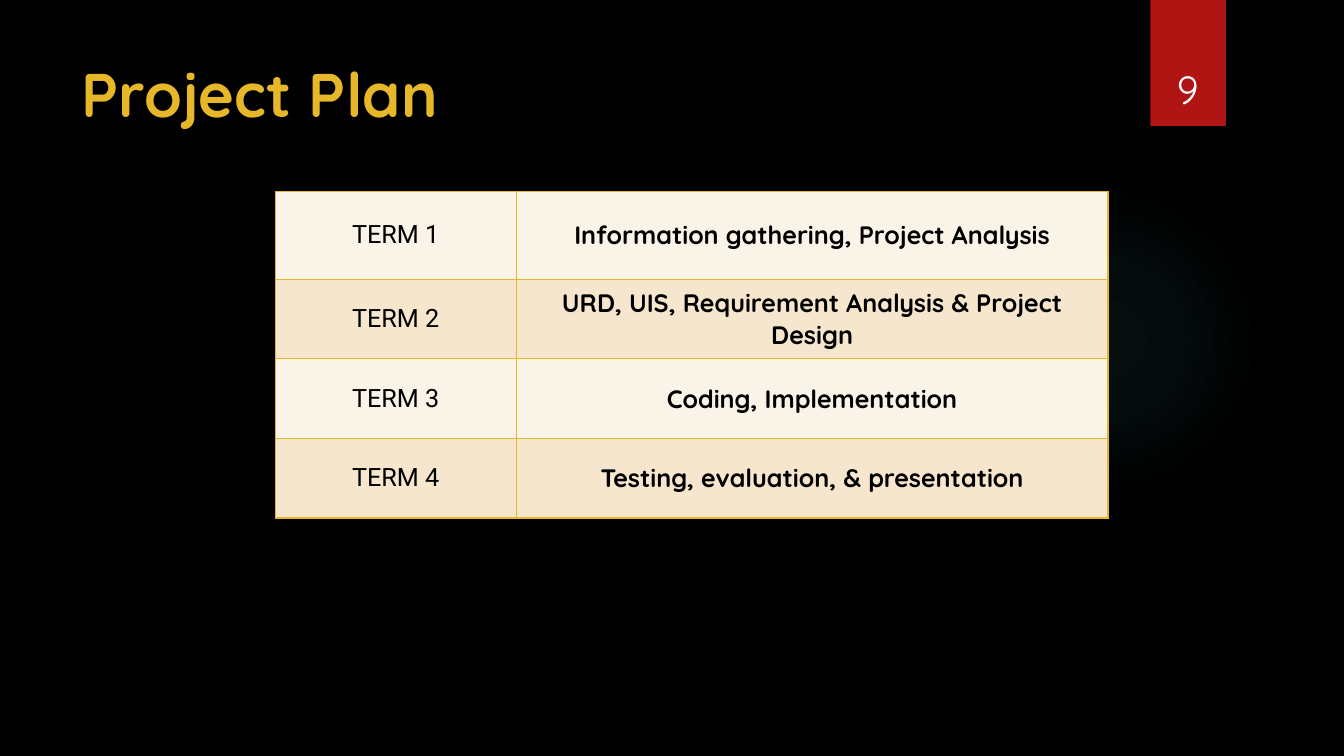
from lxml.etree import fromstring, SubElement
from pptx import Presentation
from pptx.dml.color import RGBColor
from pptx.enum.shapes import MSO_SHAPE as Shape
from pptx.enum.text import MSO_ANCHOR as Anchor, MSO_AUTO_SIZE as AutoSize, PP_ALIGN as Align
from pptx.oxml.ns import nsdecls, qn
from pptx.util import Inches, Pt

COLOURS = {
    "background": "000000",
    "glow": "50B9C1",
    "tag": "B01513",
    "accent": "E6B729",
    "number": "FFFFFF",
    "ink": "000000",
    "light row": "FAF3E8",
    "dark row": "F5E6CD",
}
HEADING_FONT, BODY_FONT = "Quicksand", "Roboto"
SLIDE_SIZE = (13.33, 7.5)
COLUMN_WIDTHS = (2.39, 5.87)
ROW_HEIGHTS = (0.87, 0.79, 0.79, 0.79)
GLOW_STOPS = ((0, 7), (36, 6), (69, 0))  # position and opacity, in percent
PLAN = (
    ("TERM 1", "Information gathering, Project Analysis"),
    ("TERM 2", "URD, UIS, Requirement Analysis & Project Design"),
    ("TERM 3", "Coding, Implementation"),
    ("TERM 4", "Testing, evaluation, & presentation"),
)


def colour(name):
    return RGBColor.from_string(COLOURS[name])


def inches(box):
    return [Inches(length) for length in box]


def format_text(frame, size, font, colour_name, bold=False, align=Align.CENTER):
    paragraph = frame.paragraphs[0]
    paragraph.alignment = align
    paragraph.font.size = Pt(size)
    paragraph.font.name = font
    paragraph.font.bold = bold
    paragraph.font.color.rgb = colour(colour_name)


def add_plain_shape(slide, kind, box):
    shape = slide.shapes.add_shape(kind, *inches(box))
    shape.shadow.inherit = False
    shape.line.fill.background()
    return shape


def add_glow(slide, box):
    shape = add_plain_shape(slide, Shape.OVAL, box)
    shape.fill.background()
    stops = "".join(
        f'<a:gs pos="{position * 1000}"><a:srgbClr val="{COLOURS["glow"]}">'
        f'<a:alpha val="{opacity * 1000}"/></a:srgbClr></a:gs>'
        for position, opacity in GLOW_STOPS
    )
    gradient = fromstring(
        f'<a:gradFill {nsdecls("a")} rotWithShape="1"><a:gsLst>{stops}</a:gsLst>'
        '<a:path path="circle"><a:fillToRect l="50000" t="50000" r="50000" b="50000"/>'
        "</a:path></a:gradFill>"
    )
    properties = shape._element.spPr
    properties.replace(properties.find(qn("a:noFill")), gradient)


def add_page_tag(slide, box, number):
    left, top, width, height = box
    tag = add_plain_shape(slide, Shape.RECTANGLE, box)
    tag.fill.solid()
    tag.fill.fore_color.rgb = colour("tag")

    # The number sits in a wider box centred on the tag
    number_box = (left - 0.09, top + 0.32, width + 0.17, height - 0.41)
    frame = slide.shapes.add_textbox(*inches(number_box)).text_frame
    frame.word_wrap = True
    frame.vertical_anchor = Anchor.BOTTOM
    frame.text = number
    format_text(frame, 28, HEADING_FONT, "number")


def place_title(slide, box, text):
    title = slide.shapes.title
    title.left, title.top, title.width, title.height = inches(box)
    frame = title.text_frame
    frame.text = text
    frame.auto_size = AutoSize.NONE
    frame.vertical_anchor = Anchor.TOP
    format_text(frame, 44, HEADING_FONT, "accent", bold=True, align=Align.LEFT)


def add_borders(cell):
    properties = cell._tc.get_or_add_tcPr()
    for side in ("lnL", "lnR", "lnT", "lnB"):
        line = SubElement(properties, qn(f"a:{side}"), w=str(Pt(1)))
        fill = SubElement(line, qn("a:solidFill"))
        SubElement(fill, qn("a:srgbClr"), val=COLOURS["accent"])


def add_plan_table(slide, left, top):
    box = (left, top, sum(COLUMN_WIDTHS), sum(ROW_HEIGHTS))
    table = slide.shapes.add_table(len(PLAN), len(COLUMN_WIDTHS), *inches(box)).table
    table.first_row = table.horz_banding = False
    for column, width in zip(table.columns, COLUMN_WIDTHS):
        column.width = Inches(width)
    for index, (row, texts) in enumerate(zip(table.rows, PLAN)):
        row.height = Inches(ROW_HEIGHTS[index])
        for position, (cell, text) in enumerate(zip(row.cells, texts)):
            is_task = position == 1
            add_borders(cell)
            cell.fill.solid()
            cell.fill.fore_color.rgb = colour("dark row" if index % 2 else "light row")
            cell.vertical_anchor = Anchor.MIDDLE
            cell.text = text
            font = HEADING_FONT if is_task else BODY_FONT
            format_text(cell.text_frame, 18, font, "ink", bold=is_task)


def build_plan_slide(presentation):
    slide = presentation.slides.add_slide(presentation.slide_layouts[5])
    slide.background.fill.solid()
    slide.background.fill.fore_color.rgb = colour("background")
    add_glow(slide, (9.41, 1.83, 3.08, 3.08))
    add_page_tag(slide, (11.41, 0, 0.75, 1.25), "9")
    place_title(slide, (0.71, 0.5, 10.29, 1.53), "Project Plan")
    add_plan_table(slide, 2.73, 1.9)


def main():
    presentation = Presentation()
    presentation.slide_width, presentation.slide_height = inches(SLIDE_SIZE)
    build_plan_slide(presentation)
    presentation.save("out.pptx")


if __name__ == "__main__":
    main()
